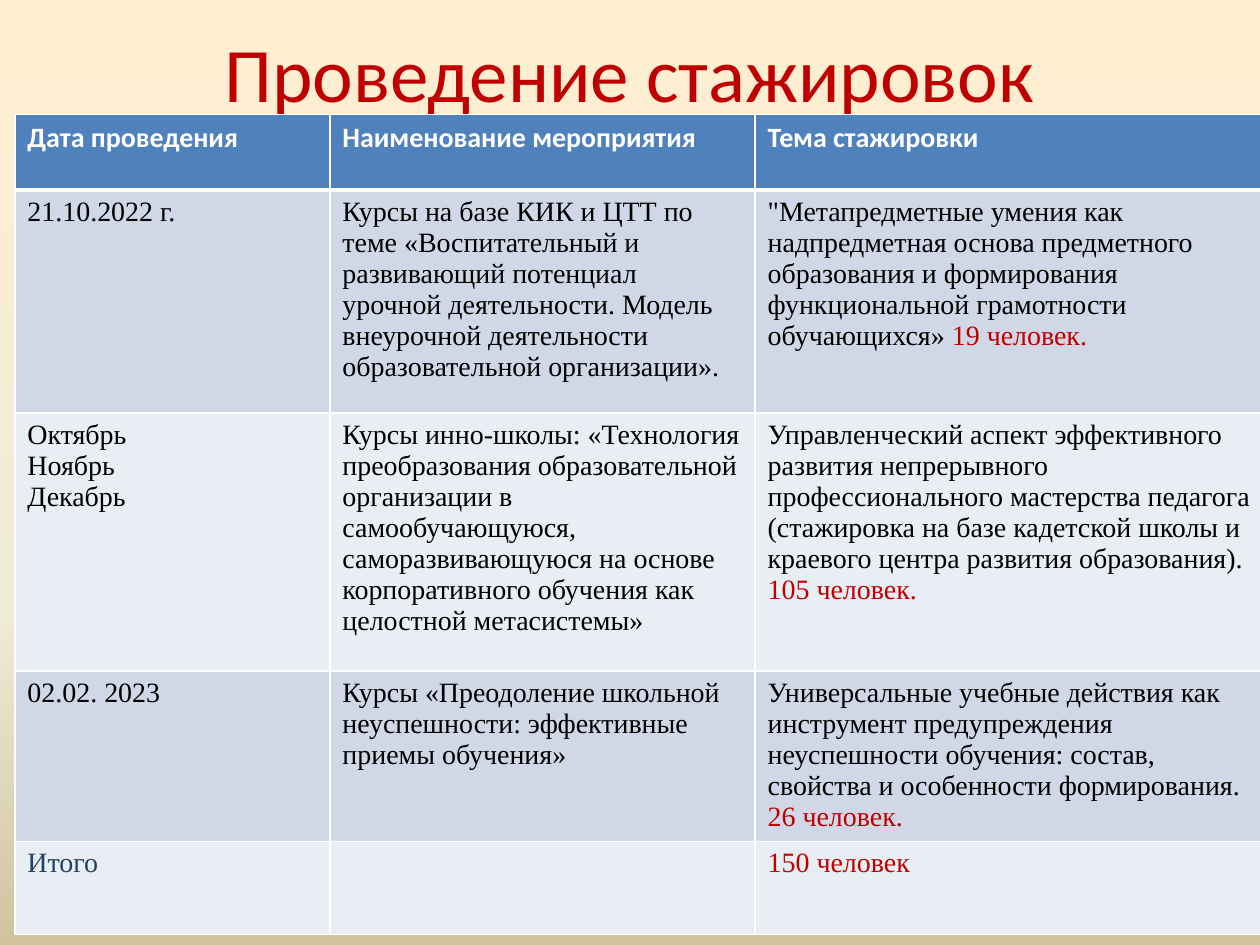
from copy import deepcopy
from dataclasses import dataclass

from lxml import etree
from pptx import Presentation
from pptx.dml.color import RGBColor
from pptx.enum.text import MSO_ANCHOR, MSO_AUTO_SIZE, PP_ALIGN
from pptx.oxml.ns import qn
from pptx.util import Pt

CENTER = PP_ALIGN.CENTER
MIDDLE = MSO_ANCHOR.MIDDLE
NO_AUTOFIT = MSO_AUTO_SIZE.NONE
TITLE_ONLY = 5


@dataclass(frozen=True)
class Theme:
    accent: str = "C00000"
    body: str = "000000"
    total: str = "254061"
    header_text: str = "FFFFFF"
    header_fill: str = "4F81BD"
    bands: tuple = ("D0D8E8", "E9EDF4")
    border: str = "FFFFFF"
    background: tuple = ((0, "FFEFD1"), (0.65, "F0EBD5"), (1, "D1C39F"))
    heading_font: str = "Calibri"
    body_font: str = "Times New Roman"
    title_size: int = 44
    table_size: int = 16


THEME = Theme()

COLUMN_WIDTHS = (180, 243, 297.5)
ROW_HEIGHTS = (43, 127.5, 147.5, 97.5, 53)
HEADERS = ("Дата проведения", "Наименование мероприятия", "Тема стажировки")

# Each row: dates, event, topic, number of participants
INTERNSHIPS = (
    ("21.10.2022 г.",
     "Курсы на базе КИК и ЦТТ по теме «Воспитательный и развивающий потенциал "
     "урочной деятельности. Модель внеурочной деятельности образовательной "
     "организации».",
     "\"Метапредметные умения как надпредметная основа предметного образования "
     "и формирования функциональной грамотности обучающихся» ",
     "19 человек."),
    ("Октябрь\nНоябрь\nДекабрь",
     "Курсы инно-школы: «Технология преобразования образовательной организации "
     "в самообучающуюся, саморазвивающуюся на основе корпоративного обучения "
     "как целостной метасистемы»",
     "Управленческий аспект эффективного развития непрерывного "
     "профессионального мастерства педагога (стажировка на базе кадетской "
     "школы и краевого центра развития образования). ",
     "105 человек."),
    ("02.02. 2023",
     "Курсы «Преодоление школьной неуспешности: эффективные приемы обучения»",
     "Универсальные учебные действия как инструмент предупреждения "
     "неуспешности обучения: состав, свойства и особенности формирования. ",
     "26 человек."),
)


def rgb(color):
    return RGBColor.from_string(color)


def format_run(run, color, font, size, bold=False):
    run.font.name = font
    run.font.size = Pt(size)
    run.font.bold = bold
    run.font.color.rgb = rgb(color)


def paint_background(slide):
    fill = slide.background.fill
    fill.gradient()
    fill.gradient_angle = 270
    first_stop = fill.gradient_stops[0]._gs
    first_stop.addnext(deepcopy(first_stop))
    for stop, (position, color) in zip(fill.gradient_stops, THEME.background):
        stop.position = position
        stop.color.rgb = rgb(color)


def add_title(slide, text):
    title = slide.shapes.title
    title.left, title.top, title.width, title.height = Pt(36), Pt(21.5), Pt(648), Pt(39)
    frame = title.text_frame
    frame.auto_size = NO_AUTOFIT
    frame.vertical_anchor = MIDDLE
    frame.text = text
    frame.paragraphs[0].alignment = CENTER
    format_run(frame.paragraphs[0].runs[0], THEME.accent, THEME.heading_font,
               THEME.title_size)


def set_borders(cell, top, bottom):
    properties = cell._tc.get_or_add_tcPr()
    widths = {"a:lnL": 1, "a:lnR": 1, "a:lnT": top, "a:lnB": bottom}
    for index, (tag, width) in enumerate(widths.items()):
        line = etree.Element(qn(tag), w=str(Pt(width)))
        solid = etree.SubElement(line, qn("a:solidFill"))
        etree.SubElement(solid, qn("a:srgbClr"), val=THEME.border)
        properties.insert(index, line)


def fill_cell(cell, fill, parts, font, bold=False):
    """Write (text, colour) parts; line breaks in the first start paragraphs."""
    cell.fill.solid()
    cell.fill.fore_color.rgb = rgb(fill)
    if not parts:
        return
    (text, color), *tail = parts
    cell.text_frame.text = text
    for paragraph in cell.text_frame.paragraphs:
        format_run(paragraph.runs[0], color, font, THEME.table_size, bold)
    for text, color in tail:
        run = cell.text_frame.paragraphs[-1].add_run()
        run.text = text
        format_run(run, color, font, THEME.table_size, bold)


def add_internship_table(slide):
    table = slide.shapes.add_table(
        len(ROW_HEIGHTS), len(COLUMN_WIDTHS), Pt(8.5), Pt(65.5),
        Pt(sum(COLUMN_WIDTHS)), Pt(sum(ROW_HEIGHTS))).table
    for column, width in zip(table.columns, COLUMN_WIDTHS):
        column.width = Pt(width)
    for row, height in zip(table.rows, ROW_HEIGHTS):
        row.height = Pt(height)

    # Header row
    for cell, text in zip(table.rows[0].cells, HEADERS):
        fill_cell(cell, THEME.header_fill, [(text, THEME.header_text)],
                  THEME.heading_font, bold=True)

    # Internships, then the total
    body_rows = [
        ([(date, THEME.body)], [(event, THEME.body)],
         [(topic, THEME.body), (people, THEME.accent)])
        for date, event, topic, people in INTERNSHIPS
    ]
    body_rows.append(([("Итого", THEME.total)], [], [("150 человек", THEME.accent)]))
    for index, contents in enumerate(body_rows):
        band = THEME.bands[index % 2]
        for cell, parts in zip(table.rows[index + 1].cells, contents):
            fill_cell(cell, band, parts, THEME.body_font)

    # White grid, thicker under the header
    for index, row in enumerate(table.rows):
        for cell in row.cells:
            set_borders(cell, top=3 if index == 1 else 1, bottom=3 if index == 0 else 1)


def main():
    deck = Presentation()
    deck.slide_width, deck.slide_height = Pt(720), Pt(540)
    slide = deck.slides.add_slide(deck.slide_layouts[TITLE_ONLY])
    paint_background(slide)
    add_title(slide, "Проведение стажировок")
    add_internship_table(slide)
    deck.save("out.pptx")


if __name__ == "__main__":
    main()
